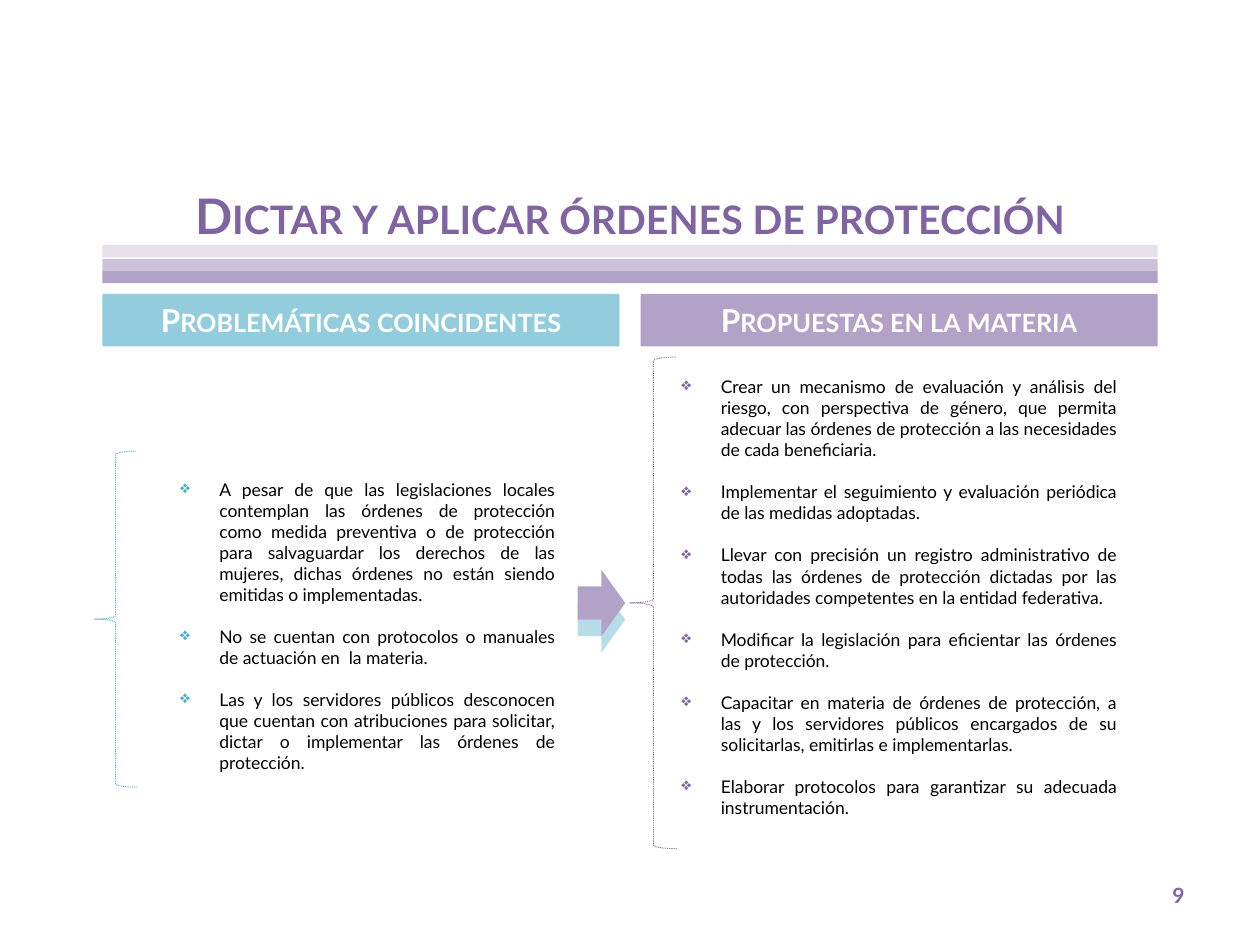
from lxml import etree
from pptx import Presentation
from pptx.dml.color import RGBColor
from pptx.enum.dml import MSO_LINE
from pptx.enum.shapes import MSO_SHAPE
from pptx.enum.text import MSO_ANCHOR, MSO_AUTO_SIZE, PP_ALIGN
from pptx.oxml.ns import qn
from pptx.util import Pt

RECT, ARROW, BRACE = MSO_SHAPE.RECTANGLE, MSO_SHAPE.DOWN_ARROW, MSO_SHAPE.LEFT_BRACE
CENTER, RIGHT, JUSTIFY = PP_ALIGN.CENTER, PP_ALIGN.RIGHT, PP_ALIGN.JUSTIFY
TOP, MIDDLE = MSO_ANCHOR.TOP, MSO_ANCHOR.MIDDLE
DOTS = MSO_LINE.ROUND_DOT
FONT = "Lato"
COLORS = {
    "purple": "8064A2", "mauve": "B3A2C7", "lilac": "CCC1DA", "pale": "E6E0EC",
    "teal": "4BACC6", "aqua": "93CDDD", "ice": "B7DEE8",
    "black": "000000", "white": "FFFFFF",
}

ISSUES = [
    "A pesar de que las legislaciones locales contemplan las órdenes de protección como medida "
    "preventiva o de protección para salvaguardar los derechos de las mujeres, dichas órdenes "
    "no están siendo emitidas o implementadas. ",
    "No se cuentan con protocolos o manuales de actuación en  la materia.",
    "Las y los servidores públicos desconocen que cuentan con atribuciones para solicitar, "
    "dictar o implementar las órdenes de protección.",
]
PLANS = [
    "Crear un mecanismo de evaluación y análisis del riesgo, con perspectiva de género, que "
    "permita adecuar las órdenes de protección a las necesidades de cada beneficiaria.",
    "Implementar el seguimiento y evaluación periódica de las medidas adoptadas.",
    "Llevar con precisión un registro administrativo de todas las órdenes de protección "
    "dictadas por las autoridades competentes en la entidad federativa.",
    "Modificar la legislación para eficientar las órdenes de protección.",
    "Capacitar en materia de órdenes de protección, a las y los servidores públicos "
    "encargados de su solicitarlas, emitirlas e implementarlas.",
    "Elaborar protocolos para garantizar su adecuada instrumentación.",
]


def rgb(name):
    return RGBColor.from_string(COLORS[name])


def points(box):
    return [Pt(n) for n in box]


def add_run(para, text, size, color, bold=False, caps=False):
    run = para.add_run()
    run.text = text
    font = run.font
    font.name, font.size, font.bold = FONT, Pt(size), bold
    font.color.rgb = rgb(color)
    if caps:
        run._r.get_or_add_rPr().set("cap", "small")


def add_shape(slide, kind, box, fill):
    shape = slide.shapes.add_shape(kind, *points(box))
    shape.shadow.inherit = False
    shape.fill.solid()
    shape.fill.fore_color.rgb = rgb(fill)
    shape.line.fill.background()
    return shape


def add_text(slide, box):
    frame = slide.shapes.add_textbox(*points(box)).text_frame
    frame.word_wrap = True
    return frame


def add_title(slide, box, text):
    title = slide.shapes.title
    title.left, title.top, title.width, title.height = points(box)
    frame = title.text_frame
    frame.auto_size = MSO_AUTO_SIZE.NONE
    frame.vertical_anchor = TOP
    para = frame.paragraphs[0]
    para.alignment = CENTER
    add_run(para, text, 28, "purple", True, True)


def add_bands(slide, box):
    left, top, width, height = box
    for shift, color in ((14.7, "mauve"), (7.8, "lilac"), (0, "pale")):
        add_shape(slide, RECT, (left, top + shift, width, height), color)


def add_header(slide, box, text, fill):
    frame = add_shape(slide, RECT, box, fill).text_frame
    frame.word_wrap = True
    frame.vertical_anchor = MIDDLE
    para = frame.paragraphs[0]
    para.alignment = CENTER
    add_run(para, text, 18, "white", True, True)


def add_bullet(para, color):
    props = para._p.get_or_add_pPr()
    props.set("marL", str(Pt(22.5)))
    props.set("indent", str(-Pt(22.5)))
    tint = etree.SubElement(props, qn("a:buClr"))
    etree.SubElement(tint, qn("a:srgbClr"), val=COLORS[color])
    etree.SubElement(props, qn("a:buChar"), char="❖")


def add_list(slide, box, items, color):
    frame = add_text(slide, box)
    for i, item in enumerate(items):
        para = frame.add_paragraph() if i else frame.paragraphs[0]
        para.alignment = JUSTIFY
        if i:
            para.space_before = Pt(12)
        add_bullet(para, color)
        add_run(para, item, 10, "black")


def add_brace(slide, box, color):
    brace = slide.shapes.add_shape(BRACE, *points(box))
    brace.shadow.inherit = False
    brace.fill.background()
    brace.line.color.rgb = rgb(color)
    brace.line.width = Pt(0.5)
    brace.line.dash_style = DOTS


def add_arrows(slide, box):
    left, top, width, height = box
    for shift, color in ((9.4, "ice"), (0, "mauve")):
        arrow = add_shape(slide, ARROW, (left, top + shift, width, height), color)
        arrow.rotation = 270


def add_number(slide, box, text):
    para = add_text(slide, box).paragraphs[0]
    para.alignment = RIGHT
    add_run(para, text, 12, "purple", True)


def main():
    deck = Presentation()
    deck.slide_width, deck.slide_height = Pt(720), Pt(540)
    slide = deck.slides.add_slide(deck.slide_layouts[5])

    # Title and stripes
    add_title(slide, (0, 102.2, 720, 41), "Dictar y aplicar órdenes de protección")
    add_bands(slide, (58.5, 140.1, 603, 7))

    # Problems, left column
    add_header(slide, (58.5, 168, 295.5, 30), "Problemáticas coincidentes", "aqua")
    add_list(slide, (95.8, 270, 228.3, 177), ISSUES, "teal")
    add_brace(slide, (54, 257.8, 24, 192), "teal")

    # Proposals, right column
    add_header(slide, (366, 168, 295.5, 30), "Propuestas en la materia", "mauve")
    add_list(slide, (382.3, 211.5, 262.8, 262), PLANS, "purple")
    add_brace(slide, (360, 204, 26.8, 281), "purple")

    # Link between columns and page number
    add_arrows(slide, (324.7, 331, 38, 27.2))
    add_number(slide, (516, 500.5, 168, 28.8), "9")

    deck.save("out.pptx")


if __name__ == "__main__":
    main()
